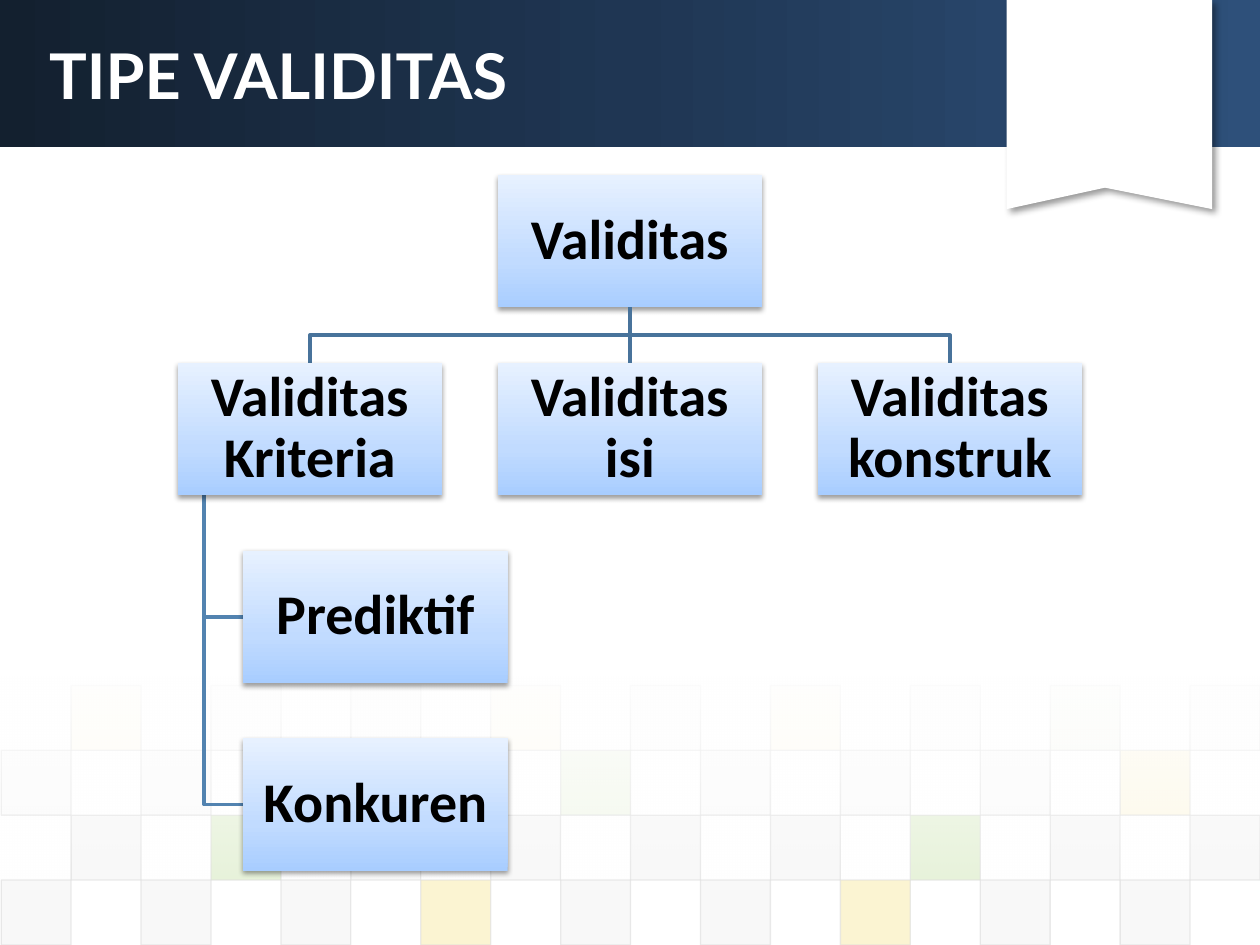
from lxml import etree
from pptx import Presentation
from pptx import util as u
from pptx.dml.color import RGBColor
from pptx.enum import shapes, text
from pptx.oxml import ns

WHITE = RGBColor(0xFF, 0xFF, 0xFF)
BLACK = RGBColor(0x00, 0x00, 0x00)
HEADER_DARK = RGBColor(0x13, 0x20, 0x2F)
HEADER_MIDDLE = RGBColor(0x1F, 0x36, 0x53)
HEADER_BLUE = RGBColor(0x2E, 0x50, 0x7A)
BOX_BOTTOM = RGBColor(0xA8, 0xCD, 0xFF)
BOX_MIDDLE = RGBColor(0xC1, 0xDB, 0xFF)
BOX_TOP = RGBColor(0xE7, 0xF1, 0xFF)
BRANCH_BLUE = RGBColor(0x48, 0x73, 0x9B)
SUBBRANCH_BLUE = RGBColor(0x52, 0x83, 0xB0)
TILE_GREY = RGBColor(0xDD, 0xDD, 0xDD)
TILE_COLORS = {
    "d": TILE_GREY,
    "l": RGBColor(0xEA, 0xEA, 0xEA),
    "g": RGBColor(0x8A, 0xC2, 0x46),
    "y": RGBColor(0xEF, 0xC8, 0x21),
}
# First column, opacity in percent, and one colour key per tile
TILE_ROWS = [
    (1, 5, "yllydylgl"),
    (0, 10, "ddddgdddy"),
    (1, 20, "dgddddgdd"),
    (0, 20, "dddyddydd"),
]
TILE_STEP_X, TILE_STEP_Y, TILE_TOP = 0.555, 0.515, 5.44
BOX_WIDTH, BOX_HEIGHT = 2.1, 1.05
COLUMN_STEP, ROW_STEP = 2.54, 1.49
LEFT, TOP = 1.41, 1.39


def add_child(parent, tag, **attributes):
    return etree.SubElement(parent, ns.qn(tag), attributes)


def set_opacity(fill, percent):
    color = fill._xPr.find(ns.qn("a:solidFill"))[0]
    add_child(color, "a:alpha", val=str(percent * 1000))


def set_gradient(shape, stops, angle):
    """Fill with (position, colour, opacity) stops; the angle runs clockwise."""
    shape.fill.background()
    placeholder = shape._element.spPr.find(ns.qn("a:noFill"))
    gradient = etree.Element(ns.qn("a:gradFill"), rotWithShape="1")
    stop_list = add_child(gradient, "a:gsLst")
    for position, color, opacity in stops:
        stop = add_child(stop_list, "a:gs", pos=str(position * 1000))
        color_element = add_child(stop, "a:srgbClr", val=str(color))
        add_child(color_element, "a:alpha", val=str(opacity * 1000))
    add_child(gradient, "a:lin", ang=str(angle * 60000), scaled="0")
    placeholder.getparent().replace(placeholder, gradient)


def set_shadow(shape, opacity, blur, distance, angle):
    effects = shape._element.spPr.find(ns.qn("a:effectLst"))
    shadow = add_child(effects, "a:outerShdw", blurRad=str(u.Pt(blur)), dist=str(u.Pt(distance)),
                       dir=str(angle * 60000), algn="ctr", rotWithShape="0")
    color = add_child(shadow, "a:srgbClr", val=str(BLACK))
    add_child(color, "a:alpha", val=str(opacity * 1000))


def add_rectangle(slide, left, top, width, height):
    shape = slide.shapes.add_shape(shapes.MSO_SHAPE.RECTANGLE, u.Inches(left), u.Inches(top),
                                   u.Inches(width), u.Inches(height))
    shape.shadow.inherit = False
    shape.line.fill.background()
    return shape


def add_outline(slide, points, close=False):
    """Draw a freeform through points given in inches."""
    corners = [(u.Inches(x), u.Inches(y)) for x, y in points]
    builder = slide.shapes.build_freeform(*corners[0])
    builder.add_line_segments(corners[1:], close=close)
    shape = builder.convert_to_shape()
    shape.shadow.inherit = False
    return shape


def add_header(slide):
    band = add_rectangle(slide, 0, 0, 10, 1.17)
    set_gradient(band, [(0, HEADER_DARK, 100), (50, HEADER_MIDDLE, 100),
                        (100, HEADER_BLUE, 100)], 0)
    ribbon = add_outline(slide, [(7.99, 0), (9.62, 0), (9.62, 1.66), (8.77, 1.49), (7.99, 1.66)],
                         close=True)
    ribbon.fill.solid()
    ribbon.fill.fore_color.rgb = WHITE
    ribbon.line.fill.background()
    set_shadow(ribbon, 40, 4, 3, 45)


def add_tiles(slide):
    for row, (first_column, opacity, keys) in enumerate(TILE_ROWS):
        for index, key in enumerate(keys):
            column = first_column + 2 * index
            tile = add_rectangle(slide, column * TILE_STEP_X + 0.01, TILE_TOP + row * TILE_STEP_Y,
                                 TILE_STEP_X, TILE_STEP_Y)
            tile.fill.solid()
            tile.fill.fore_color.rgb = TILE_COLORS[key]
            set_opacity(tile.fill, opacity)
            tile.line.color.rgb = TILE_GREY
            tile.line.width = u.Pt(0.75)
            set_opacity(tile.line.fill, 60)
    fade = add_rectangle(slide, 0, 5.37, 10, 1.62)
    set_gradient(fade, [(0, WHITE, 90), (100, WHITE, 0)], 90)


def set_title(slide, wording):
    title = slide.shapes.title
    title.left, title.top = u.Inches(0.29), u.Inches(0.13)
    title.width, title.height = u.Inches(8.08), u.Inches(0.92)
    frame = title.text_frame
    frame.text = wording
    frame.vertical_anchor = text.MSO_ANCHOR.MIDDLE
    paragraph = frame.paragraphs[0]
    paragraph.alignment = text.PP_ALIGN.LEFT
    font = paragraph.font
    font.name, font.size, font.bold = "Lato", u.Pt(36), True
    font.color.rgb = WHITE
    slide.shapes._spTree.append(title._element)  # in front of the header band


def add_box(slide, wording, left, top):
    box = add_rectangle(slide, left, top, BOX_WIDTH, BOX_HEIGHT)
    set_gradient(box, [(0, BOX_BOTTOM, 100), (35, BOX_MIDDLE, 100), (100, BOX_TOP, 100)], 270)
    set_shadow(box, 38, 3.1, 1.6, 90)
    frame = box.text_frame
    frame.word_wrap = True
    frame.vertical_anchor = text.MSO_ANCHOR.MIDDLE
    frame.margin_left = frame.margin_right = u.Inches(0.02)
    frame.margin_top = frame.margin_bottom = u.Inches(0.02)
    frame.text = wording
    paragraph = frame.paragraphs[0]
    paragraph.alignment = text.PP_ALIGN.CENTER
    paragraph.line_spacing = 0.9
    font = paragraph.font
    font.name, font.size, font.bold = "Calibri", u.Pt(32), True
    font.color.rgb = BLACK
    return box


def style_line(shape, color):
    shape.line.color.rgb = color
    shape.line.width = u.Pt(2)


def add_branch(slide, points, color):
    branch = add_outline(slide, points)
    branch.fill.background()
    style_line(branch, color)


def add_trunk(slide, upper, lower):
    trunk = slide.shapes.add_connector(shapes.MSO_CONNECTOR.STRAIGHT, 0, 0, 0, 0)
    trunk.begin_connect(upper, 2)
    trunk.end_connect(lower, 0)
    add_child(trunk._element.spPr, "a:effectLst")
    style_line(trunk, BRANCH_BLUE)


def add_hierarchy(slide):
    center = LEFT + COLUMN_STEP + BOX_WIDTH / 2
    root_bottom = TOP + BOX_HEIGHT
    type_top = TOP + ROW_STEP
    fork = (root_bottom + type_top) / 2
    for x in (center - COLUMN_STEP, center + COLUMN_STEP):
        add_branch(slide, [(center, root_bottom), (center, fork), (x, fork), (x, type_top)],
                   BRANCH_BLUE)

    stem, child_left = LEFT + 0.21, LEFT + 0.52
    for level, wording in enumerate(["Prediktif", "Konkuren"], start=2):
        top = TOP + level * ROW_STEP
        middle = top + BOX_HEIGHT / 2
        add_branch(slide, [(stem, type_top + BOX_HEIGHT), (stem, middle), (child_left, middle)],
                   SUBBRANCH_BLUE)
        add_box(slide, wording, child_left, top)

    root = add_box(slide, "Validitas", LEFT + COLUMN_STEP, TOP)
    types = [add_box(slide, wording, LEFT + column * COLUMN_STEP, type_top)
             for column, wording in enumerate(
                 ["Validitas Kriteria", "Validitas isi", "Validitas konstruk"])]
    add_trunk(slide, root, types[1])


def main():
    presentation = Presentation()
    presentation.slide_width, presentation.slide_height = u.Inches(10), u.Inches(7.5)
    slide = presentation.slides.add_slide(presentation.slide_layouts[5])
    add_header(slide)
    add_tiles(slide)
    set_title(slide, "TIPE VALIDITAS")
    add_hierarchy(slide)
    presentation.save("out.pptx")


if __name__ == "__main__":
    main()
